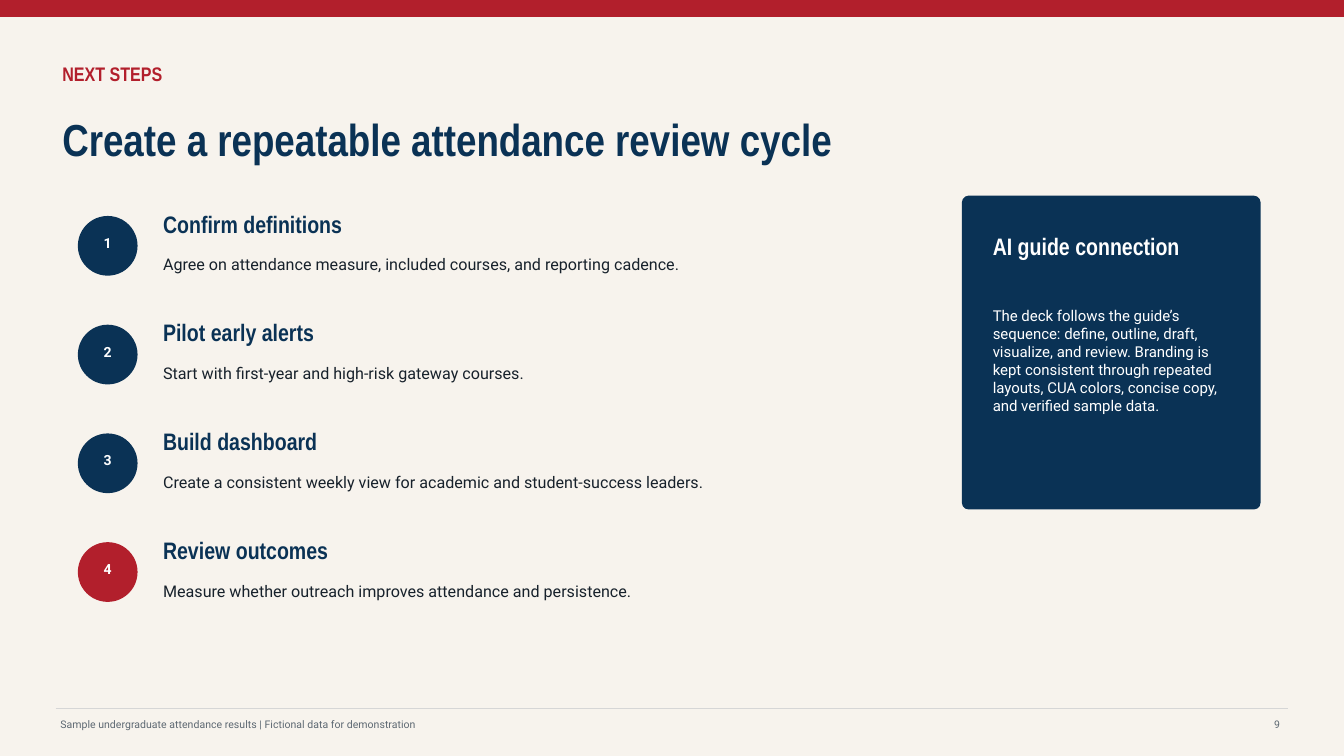
import pptx
import pptx.util
import pptx.dml.color
import pptx.enum.shapes
import pptx.enum.text
import pptx.oxml.ns
import lxml.etree

Cm = pptx.util.Cm
Pt = pptx.util.Pt
RGBColor = pptx.dml.color.RGBColor
SHAPE = pptx.enum.shapes.MSO_SHAPE
ALIGN = pptx.enum.text.PP_ALIGN

NAVY = RGBColor(0x0A, 0x32, 0x55)
RED = RGBColor(0xB2, 0x1F, 0x2C)
CREAM = RGBColor(0xF7, 0xF3, 0xED)
WHITE = RGBColor(0xFF, 0xFF, 0xFF)
INK = RGBColor(0x17, 0x21, 0x2B)
GREY = RGBColor(0x5D, 0x68, 0x72)
RULE = RGBColor(0xD6, 0xD6, 0xD6)
HEAD = "Arial Narrow"
BODY = "Roboto"


def draw(kind, left, top, width, height, color):
    shape = slide.shapes.add_shape(kind, Cm(left), Cm(top), Cm(width), Cm(height))
    shape.shadow.inherit = False
    shape.fill.solid()
    shape.fill.fore_color.rgb = color
    shape.line.color.rgb = color
    shape.line.width = Pt(1)
    return shape


def write(box, text, size, font, color, bold=False, align=ALIGN.LEFT):
    """Fill a shape, or a new text box given as (left, top, width, height) in cm."""
    if isinstance(box, tuple):
        box = slide.shapes.add_textbox(*map(Cm, box))
    frame = box.text_frame
    frame.text = text
    frame.word_wrap = True
    frame.auto_size = pptx.enum.text.MSO_AUTO_SIZE.NONE
    frame.vertical_anchor = pptx.enum.text.MSO_ANCHOR.MIDDLE
    frame.margin_left = frame.margin_right = 0
    frame.margin_top = frame.margin_bottom = 0
    frame.paragraphs[0].alignment = align
    run = frame.paragraphs[0].runs[0]
    run.font.name = font
    run.font.size = Pt(size)
    run.font.bold = bold
    run.font.color.rgb = color


deck = pptx.Presentation()
deck.slide_width = Cm(33.87)
deck.slide_height = Cm(19.05)
slide = deck.slides.add_slide(deck.slide_layouts[5])
slide.background.fill.solid()
slide.background.fill.fore_color.rgb = CREAM

# Header
draw(SHAPE.RECTANGLE, 0, 0, 33.87, 0.41, RED)
write((1.57, 1.47, 5.59, 0.76), "NEXT STEPS", 14, HEAD, RED, True)
title = slide.shapes.title
title.left, title.top = Cm(1.57), Cm(2.59)
title.width, title.height = Cm(21.84), Cm(1.83)
write(title, "Create a repeatable attendance review cycle", 32, HEAD, NAVY, True)

# Numbered steps
steps = [
    ("Confirm definitions",
     "Agree on attendance measure, included courses, and reporting cadence.", NAVY),
    ("Pilot early alerts",
     "Start with first-year and high-risk gateway courses.", NAVY),
    ("Build dashboard",
     "Create a consistent weekly view for academic and student-success leaders.", NAVY),
    ("Review outcomes",
     "Measure whether outreach improves attendance and persistence.", RED),
]
for i, (name, detail, color) in enumerate(steps):
    top = 5.33 + i * 2.74
    badge = draw(SHAPE.OVAL, 1.98, top + 0.13, 1.47, 1.47, color)
    write(badge, str(i + 1), 10, BODY, WHITE, True, ALIGN.CENTER)
    badge.text_frame.margin_bottom = Cm(0.15)
    write((4.11, top, 9.65, 0.61), name, 17, HEAD, NAVY, True)
    write((4.11, top + 0.89, 18.29, 0.89), detail, 11.5, BODY, INK)

# Side panel
panel = draw(SHAPE.ROUNDED_RECTANGLE, 24.26, 4.95, 7.49, 7.87, NAVY)
panel.adjustments[0] = 0.02
write((25.02, 5.84, 5.97, 0.71), "AI guide connection", 17, HEAD, WHITE, True)
write((25.02, 7.37, 5.72, 3.43),
      "The deck follows the guide’s sequence: define, outline, draft, visualize, "
      "and review. Branding is kept consistent through repeated layouts, CUA colors, "
      "concise copy, and verified sample data.", 10.7, BODY, WHITE)

# Footer
rule = slide.shapes.add_connector(
    pptx.enum.shapes.MSO_CONNECTOR.STRAIGHT, Cm(1.4), Cm(17.86), Cm(32.46), Cm(17.86))
rule.line.color.rgb = RULE
rule.line.width = Pt(0.75)
lxml.etree.SubElement(rule._element.spPr, pptx.oxml.ns.qn("a:effectLst"))
write((1.52, 17.98, 21.84, 0.56),
      "Sample undergraduate attendance results | Fictional data for demonstration",
      7.5, BODY, GREY)
write((31.37, 17.98, 0.89, 0.56), "9", 7.5, BODY, GREY, align=ALIGN.RIGHT)

deck.save("out.pptx")
